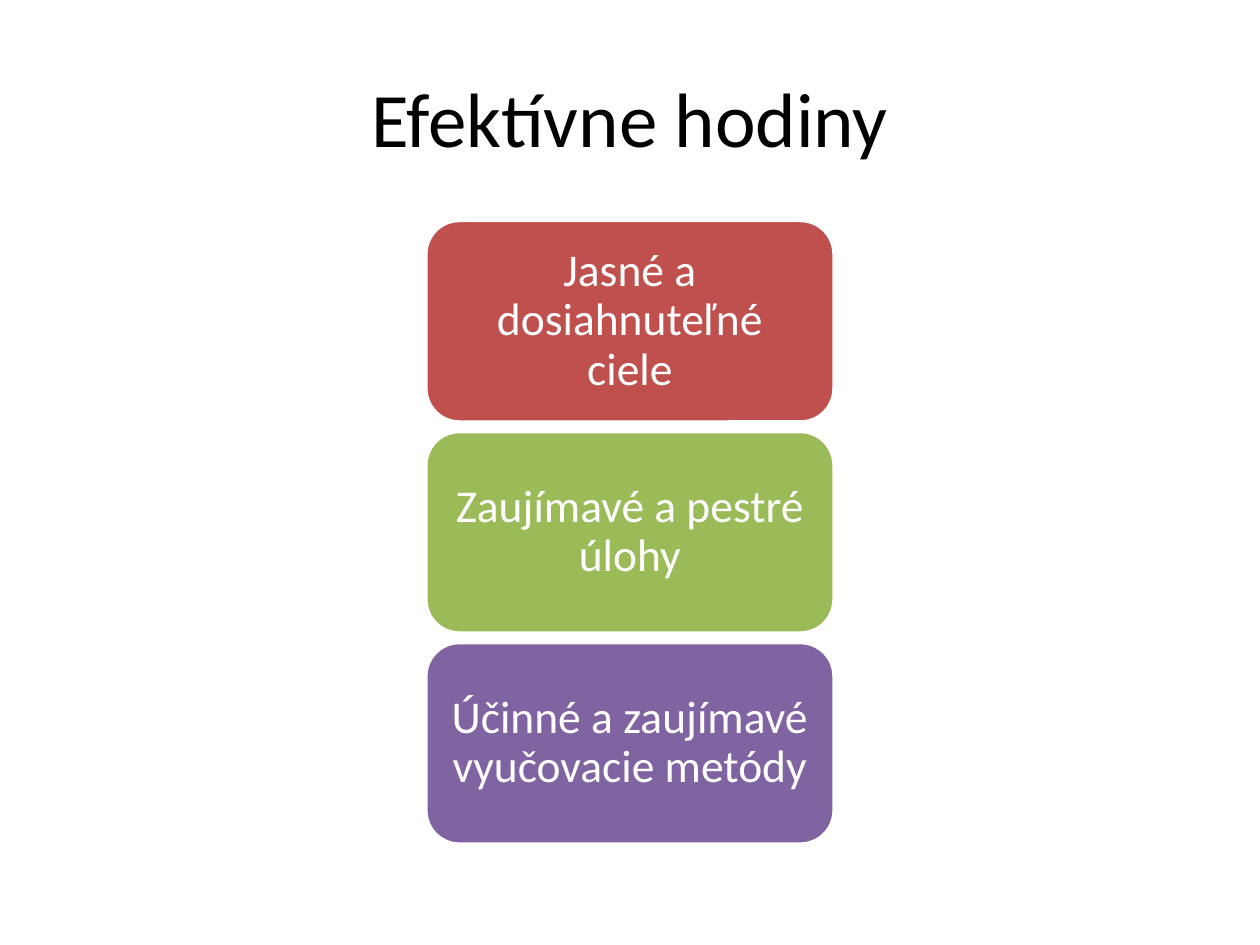
from dataclasses import dataclass

from pptx import Presentation
from pptx.dml.color import RGBColor
from pptx.enum.shapes import MSO_SHAPE
from pptx.enum.text import MSO_ANCHOR, PP_ALIGN
from pptx.slide import Slide
from pptx.util import Pt

COLORS = {
    "black": "000000",
    "white": "FFFFFF",
    "red": "C0504D",
    "green": "9BBB59",
    "purple": "8064A2",
}
FONT = "Calibri"
SLIDE_W, SLIDE_H = 720, 540
BOX_W, BOX_H = 233.28, 115.2
BOX_TOP, BOX_PITCH = 126, 120.6


@dataclass
class Principle:
    text: str
    color: str


PRINCIPLES = [
    Principle("Jasné a dosiahnuteľné ciele", "red"),
    Principle("Zaujímavé a pestré úlohy", "green"),
    Principle("Účinné a zaujímavé vyučovacie metódy", "purple"),
]


def rgb(name: str) -> RGBColor:
    return RGBColor.from_string(COLORS[name])


def set_text(shape, text: str, size: float, color: str) -> None:
    tf = shape.text_frame
    tf.text = text
    tf.word_wrap = True
    tf.vertical_anchor = MSO_ANCHOR.MIDDLE
    p = tf.paragraphs[0]
    p.alignment = PP_ALIGN.CENTER
    p.font.name = FONT
    p.font.size = Pt(size)
    p.font.color.rgb = rgb(color)


def add_title(s: Slide, text: str) -> None:
    title = s.shapes.title
    title.left, title.top = Pt(36), Pt(21.6)
    title.width, title.height = Pt(648), Pt(90)
    set_text(title, text, 44, "black")


def add_principle(s: Slide, item: Principle, top: float) -> None:
    sp = s.shapes.add_shape(
        MSO_SHAPE.ROUNDED_RECTANGLE,
        Pt((SLIDE_W - BOX_W) / 2), Pt(top), Pt(BOX_W), Pt(BOX_H),
    )
    sp.shadow.inherit = False
    sp.fill.solid()
    sp.fill.fore_color.rgb = rgb(item.color)
    sp.line.color.rgb = rgb("white")
    sp.line.width = Pt(2)
    set_text(sp, item.text, 26, "white")
    tf = sp.text_frame
    tf.margin_left = tf.margin_right = Pt(7.8)
    tf.margin_top = tf.margin_bottom = Pt(3.9)
    tf.paragraphs[0].line_spacing = 0.9


def main() -> None:
    prs = Presentation()
    prs.slide_width, prs.slide_height = Pt(SLIDE_W), Pt(SLIDE_H)
    s = prs.slides.add_slide(prs.slide_layouts[5])
    add_title(s, "Efektívne hodiny")
    for i, item in enumerate(PRINCIPLES):
        add_principle(s, item, BOX_TOP + i * BOX_PITCH)
    prs.save("out.pptx")


if __name__ == "__main__":
    main()
